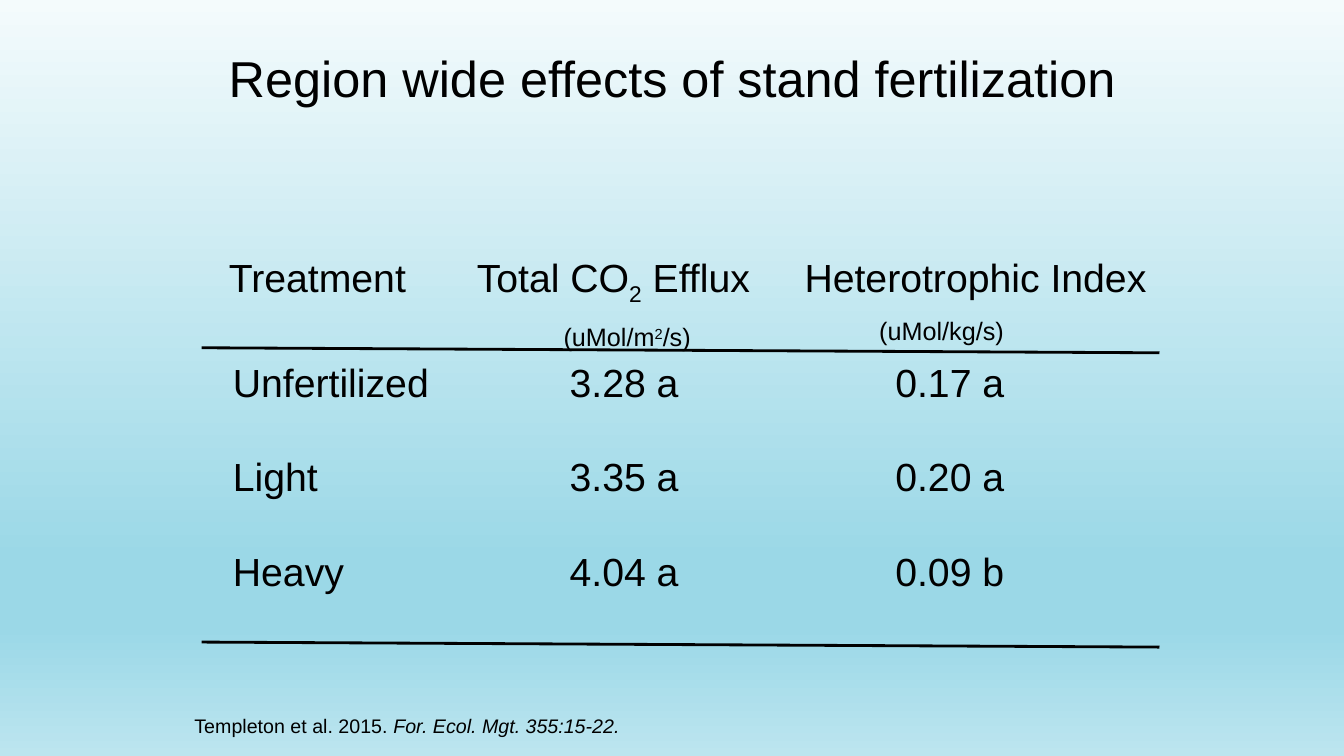
from dataclasses import dataclass

from lxml.etree import SubElement
from pptx import Presentation
from pptx.dml.color import RGBColor
from pptx.enum.shapes import MSO_CONNECTOR
from pptx.oxml.ns import qn
from pptx.util import Inches, Pt


@dataclass(frozen=True)
class Theme:
    font: str = "Arial"
    ink: str = "000000"
    title: int = 36
    body: int = 28
    unit: int = 18
    cite: int = 14
    rule: int = 2
    sky: tuple = ((0, "F4FBFC"), (74, "9BD8E7"), (83, "9BD8E7"), (100, "BCE5EF"))


THEME = Theme()
PLAIN_GRID = "{2D5ABB26-0587-4C30-8999-92F81FD0307C}"  # no style, no grid

LEFTS = (2.27, 4.73, 7.98, 11.5)
TOP, HEAD, ROW = 2.51, 1.01, 0.94
PAD = 0.04
# Each run is a text and its baseline shift in percent.
HEADS = (
    [("Treatment", 0)],
    [("Total CO", 0), ("2", -25), (" Efflux", 0)],
    [("Heterotrophic Index", 0)],
)
UNITS = (
    None,
    [("(uMol/m", 0), ("2", 30), ("/s)", 0)],
    [("(uMol/kg/s)", 0)],
)
UNIT_INDENTS = (0, 0.86, 0.74)
ROWS = (
    ("Unfertilized", "3.28 a", "0.17 a"),
    ("Light", "3.35 a", "0.20 a"),
    ("Heavy", "4.04 a", "0.09 b"),
)
ROW_INDENTS = (0.04, 0.92, 0.9)


def paint(slide):
    """Give the slide its vertical gradient."""
    fill = slide.background.fill
    fill.gradient()
    fill.gradient_angle = 270
    stops = slide.element.find(".//" + qn("a:gsLst"))
    for stop in list(stops):
        stops.remove(stop)
    for place, color in THEME.sky:
        stop = SubElement(stops, qn("a:gs"), pos=str(place * 1000))
        SubElement(stop, qn("a:srgbClr"), val=color)


def write(para, runs, size, indent=0):
    if indent:
        para._p.get_or_add_pPr().set("marL", str(Inches(indent)))
    para.font.name = THEME.font
    para.font.size = Pt(size)
    para.font.color.rgb = RGBColor.from_string(THEME.ink)
    for text, shift in runs:
        run = para.add_run()
        run.text = text
        if shift:
            run._r.get_or_add_rPr().set("baseline", str(shift * 1000))


def add_text(slide, left, top, width, height, runs, size):
    box = slide.shapes.add_textbox(
        Inches(left), Inches(top), Inches(width), Inches(height)
    )
    box.text_frame.word_wrap = True
    para = box.text_frame.paragraphs[0]
    write(para, runs, size)
    return para


def add_rule(slide, top):
    line = slide.shapes.add_connector(
        MSO_CONNECTOR.STRAIGHT,
        Inches(2), Inches(top), Inches(11.5), Inches(top + 0.05),
    )
    line.line.color.rgb = RGBColor.from_string(THEME.ink)
    line.line.width = Pt(THEME.rule)
    SubElement(line._element.spPr, qn("a:effectLst"))


def add_grid(slide):
    frame = slide.shapes.add_table(
        len(ROWS) + 1, len(HEADS), Inches(LEFTS[0]), Inches(TOP),
        Inches(LEFTS[-1] - LEFTS[0]), Inches(HEAD + ROW * len(ROWS)),
    )
    grid = frame.table
    grid.first_row = grid.horz_banding = False
    frame._element.find(".//" + qn("a:tableStyleId")).text = PLAIN_GRID
    for col, left, right in zip(grid.columns, LEFTS, LEFTS[1:]):
        col.width = Inches(right - left)
    for num, row in enumerate(grid.rows):
        row.height = Inches(ROW if num else HEAD)
        for col, cell in enumerate(row.cells):
            cell.fill.background()
            cell.margin_left = cell.margin_right = cell.margin_bottom = 0
            cell.margin_top = Inches(PAD)
            para = cell.text_frame.paragraphs[0]
            if num:
                write(para, [(ROWS[num - 1][col], 0)], THEME.body, ROW_INDENTS[col])
                continue
            write(para, HEADS[col], THEME.body)
            if UNITS[col]:
                para = cell.text_frame.add_paragraph()
                para.space_before = Pt(12)
                write(para, UNITS[col], THEME.unit, UNIT_INDENTS[col])


def main():
    deck = Presentation()
    deck.slide_width, deck.slide_height = Inches(13.33), Inches(7.5)
    slide = deck.slides.add_slide(deck.slide_layouts[6])
    paint(slide)
    add_text(slide, 2.17, 0.42, 9.09, 0.71,
             [("Region wide effects of stand fertilization", 0)], THEME.title)
    add_grid(slide)
    for top in (3.45, 6.37):
        add_rule(slide, top)
    cite = add_text(slide, 1.83, 7.03, 7.42, 0.34,
                    [("Templeton et al. 2015. ", 0),
                     ("For. Ecol. Mgt. 355:15-22.", 0)], THEME.cite)
    cite.runs[1].font.italic = True
    deck.save("out.pptx")


if __name__ == "__main__":
    main()
